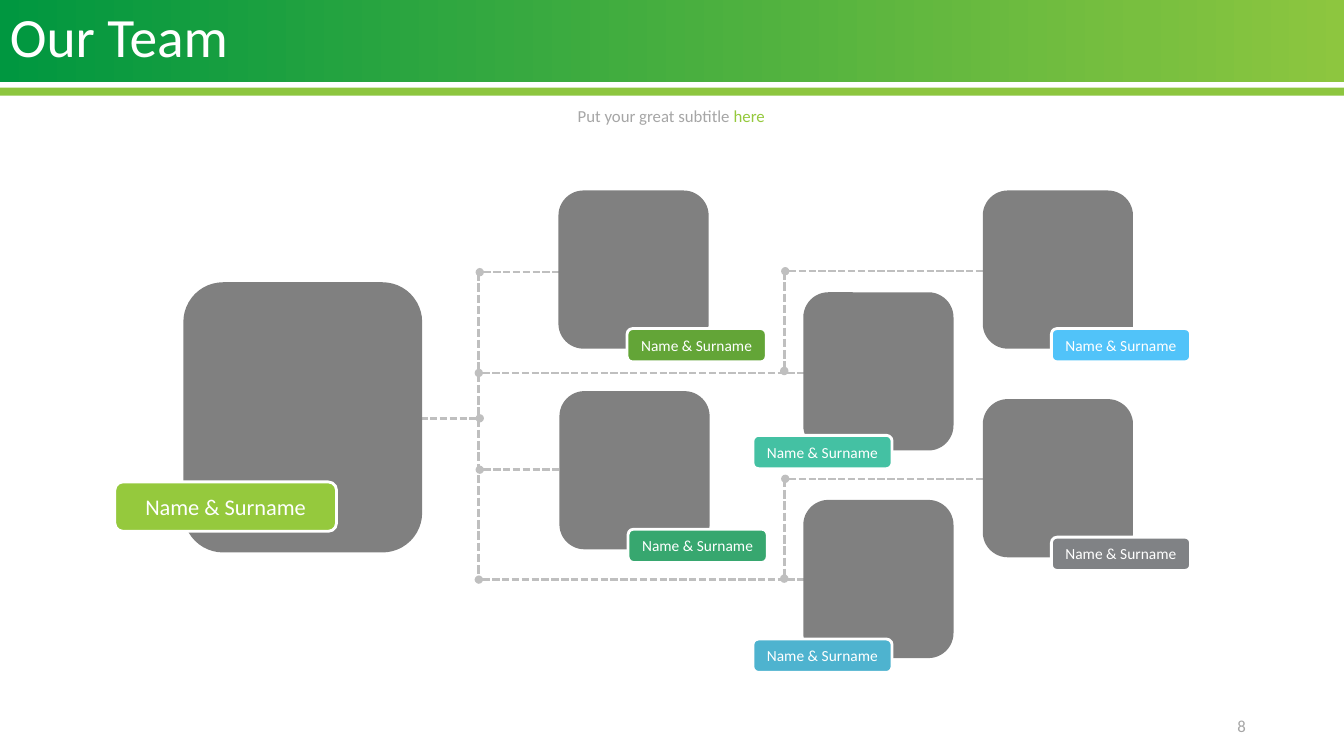
from copy import deepcopy

from lxml import etree
from pptx import Presentation
from pptx.dml.color import RGBColor
from pptx.enum import dml, shapes, text
from pptx.oxml.ns import qn
from pptx.util import Pt

# Content
TITLE = "Our Team"
SUBTITLE = [("Put your great subtitle ", "grey"), ("here", "lime")]
NAME = "Name & Surname"
PAGE_NUMBER = "8"

COLORS = {
    "white": "FFFFFF", "grey": "A6A6A6", "photo": "808080", "line": "BFBFBF",
    "lime": "95C93D", "band": "8DC63F", "green": "63A537", "jade": "37A76F",
    "mint": "44C1A3", "teal": "4EB3CF", "sky": "51C3F9", "slate": "808285",
}
BAND_STOPS = [(0, "009740"), (0.85, "78BF3F"), (1, "8DC63F")]

# Card left and top, label offset from the card, label colour
LEAD = (131, 201.6, -49, 142.6, "lime")
MEMBERS = [
    (398.9, 136.1, 49, 98.6, "green"),
    (399.6, 279.4, 49, 98.6, "jade"),
    (573.8, 208.8, -36, 102.2, "mint"),
    (573.8, 357.1, -36, 99.4, "teal"),
    (702, 136.1, 49, 98.6, "sky"),
    (702, 285.1, 49, 98.6, "slate"),
]
LEAD_CARD, LEAD_LABEL = (170.6, 193), (158.4, 35.3)
MEMBER_CARD, MEMBER_LABEL = (107.3, 113), (99.4, 23.8)

# Connectors: x1, y1, x2, y2, width, end that carries the dot
TRUNK, BRANCH = 342, 560.2
LINKS = [
    (300.2, 298.8, 342.7, 298.8, 1.75, "a:tailEnd"),
    (TRUNK, 194.4, TRUNK, 412.6, 2, None),
    (342.7, 194.4, 399.6, 194.4, 1.75, "a:headEnd"),
    (TRUNK, 266.4, 582.5, 266.4, 1.75, "a:headEnd"),
    (342.7, 335.5, 399.6, 335.5, 1.75, "a:headEnd"),
    (TRUNK, 414, 582.5, 414, 1.75, "a:headEnd"),
]
for top in (193.7, 342):
    LINKS += [
        (BRANCH, top, BRANCH, top + 71.3, 2, "a:tailEnd"),
        (BRANCH + 0.7, top, 717.1, top, 1.75, "a:headEnd"),
    ]

deck = Presentation()
deck.slide_width, deck.slide_height = Pt(960), Pt(540)
page = deck.slides.add_slide(deck.slide_layouts[6])


def rgb(name):
    return RGBColor.from_string(COLORS[name])


def write(box, spans, size, align=text.PP_ALIGN.CENTER, wrap=True,
          spacing=None, margin=7.2):
    frame = box.text_frame
    frame.word_wrap = wrap
    frame.vertical_anchor = text.MSO_ANCHOR.MIDDLE
    frame.margin_left = frame.margin_right = Pt(margin)
    frame.margin_top = frame.margin_bottom = Pt(3.6)
    para = frame.paragraphs[0]
    para.alignment = align
    para.line_spacing = spacing
    for words, color in spans:
        span = para.add_run()
        span.text = words
        span.font.name = "Calibri"
        span.font.size = Pt(size)
        span.font.color.rgb = rgb(color)


def add_text(left, top, width, height, spans, size, **style):
    box = page.shapes.add_textbox(Pt(left), Pt(top), Pt(width), Pt(height))
    write(box, spans, size, **style)


def add_block(kind, left, top, width, height, fill=None, outline=None):
    block = page.shapes.add_shape(kind, Pt(left), Pt(top), Pt(width), Pt(height))
    block.shadow.inherit = False
    if fill:
        block.fill.solid()
        block.fill.fore_color.rgb = rgb(fill)
    if outline:
        block.line.color.rgb = rgb(outline)
        block.line.width = Pt(2)
    else:
        block.line.fill.background()
    return block


def add_link(x1, y1, x2, y2, width, dot_end):
    link = page.shapes.add_connector(
        shapes.MSO_CONNECTOR.STRAIGHT, Pt(x1), Pt(y1), Pt(x2), Pt(y2))
    link.line.color.rgb = rgb("line")
    link.line.width = Pt(width)
    link.line.dash_style = dml.MSO_LINE.SQUARE_DOT
    properties = link._element.spPr
    if dot_end:
        etree.SubElement(properties.find(qn("a:ln")), qn(dot_end), type="oval")
    etree.SubElement(properties, qn("a:effectLst"))


def add_member(left, top, dx, dy, color, card, label, size):
    rounded = shapes.MSO_SHAPE.FLOWCHART_ALTERNATE_PROCESS
    add_block(rounded, left, top, *card, fill="photo")
    tag = add_block(rounded, left + dx, top + dy, *label, fill=color, outline="white")
    write(tag, [(NAME, "white")], size, margin=3.6)


# Header band and stripe
band = add_block(shapes.MSO_SHAPE.RECTANGLE, 0, -7.2, 960, 65.5)
band.fill.gradient()
band.fill.gradient_angle = 0
stop_list = band._element.spPr.find(qn("a:gradFill")).find(qn("a:gsLst"))
stop_list.append(deepcopy(stop_list[0]))
for stop, (position, color) in zip(band.fill.gradient_stops, BAND_STOPS):
    stop.position = position
    stop.color.rgb = RGBColor.from_string(color)
add_block(shapes.MSO_SHAPE.RECTANGLE, 0, 62.6, 960, 5.8, fill="band")

# Title, subtitle and page number
add_text(0, 2.9, 898.6, 51.1, [(TITLE, "white")], 39.6,
         align=text.PP_ALIGN.LEFT, spacing=0.9)
add_text(403.9, 72, 151.2, 21.6, SUBTITLE, 12, wrap=False)
add_text(793.4, 507.6, 103.7, 21.6, [(PAGE_NUMBER, "grey")], 12,
         align=text.PP_ALIGN.RIGHT)

# Team chart
for link in LINKS:
    add_link(*link)
add_member(*LEAD, LEAD_CARD, LEAD_LABEL, 16)
for member in MEMBERS:
    add_member(*member, MEMBER_CARD, MEMBER_LABEL, 11)

deck.save("out.pptx")
